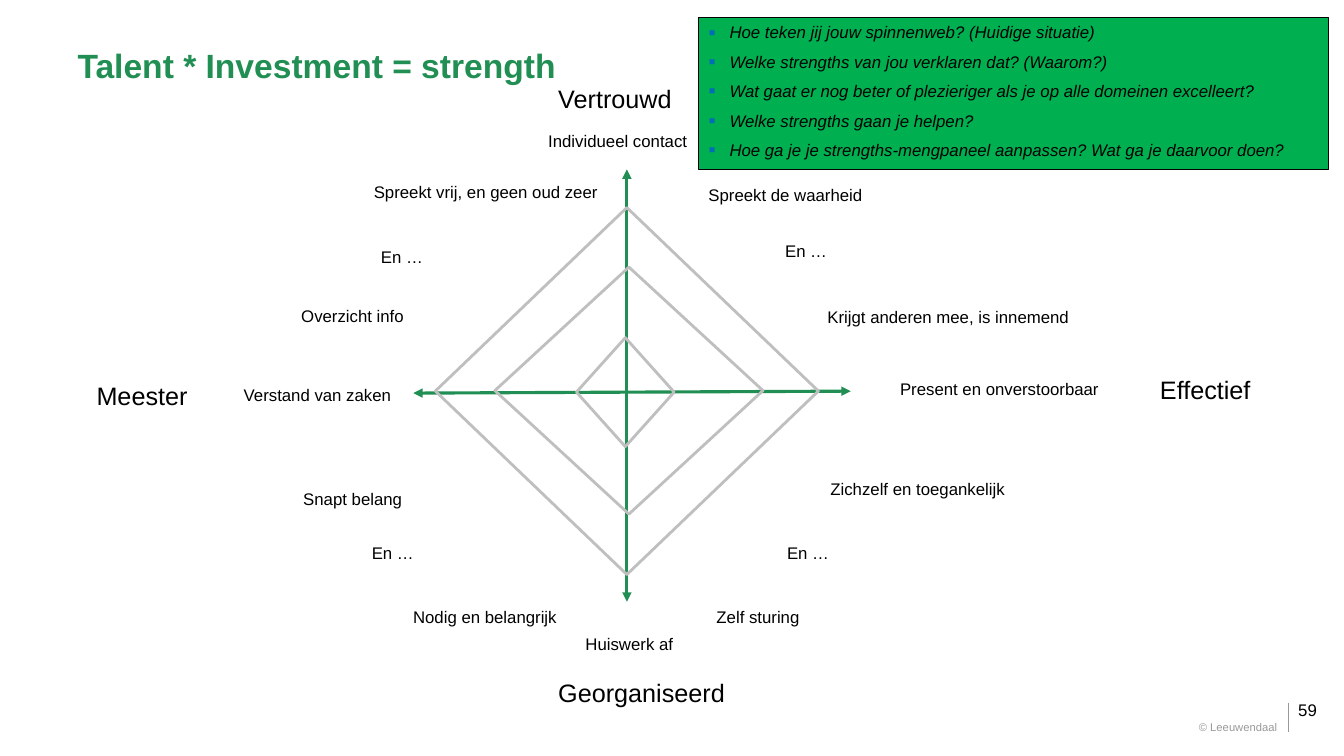
from dataclasses import dataclass

from lxml.etree import SubElement
from pptx import Presentation
from pptx.dml.color import RGBColor
from pptx.enum.shapes import MSO_CONNECTOR, MSO_SHAPE
from pptx.enum.text import MSO_ANCHOR, PP_ALIGN
from pptx.oxml.ns import qn
from pptx.shapes.autoshape import Shape
from pptx.slide import Slide
from pptx.text.text import _Paragraph as Paragraph
from pptx.util import Pt

GREEN = RGBColor(0x21, 0x8F, 0x53)
PANEL_GREEN = RGBColor(0x00, 0xB0, 0x50)
WEB_GREY = RGBColor(0xBF, 0xBF, 0xBF)
FOOTER_GREY = RGBColor(0x99, 0x99, 0x99)
BULLET_BLUE = RGBColor(0x00, 0x6E, 0xB6)
BLACK = RGBColor(0, 0, 0)


@dataclass(frozen=True)
class Label:
    text: str
    left: float
    top: float
    width: float
    size: float = 12


@dataclass(frozen=True)
class Line:
    start: tuple[float, float]
    end: tuple[float, float]
    color: RGBColor = GREEN
    weight: float = 2.25
    arrows: bool = True


@dataclass(frozen=True)
class Diamond:
    left: float
    top: float
    width: float
    height: float


LINES = [
    Line((295.2, 280.8), (607.7, 279.4)),
    Line((447.8, 429.8), (447.8, 121)),
    Line((920.2, 501.8), (920.2, 522.7), FOOTER_GREY, 0.75, False),
]

LABELS = [
    Label("Georganiseerd", 391.7, 480.2, 134.6, 18),
    Label("Effectief", 821.5, 263.5, 80, 18),
    Label("Meester", 61.9, 267.8, 80, 18),
    Label("Vertrouwd", 391.7, 56.2, 96.5, 18),
    Label("Huiswerk af", 411.1, 449.3, 77.8),
    Label("Nodig en belangrijk", 288, 429.8, 117.4),
    Label("Zelf sturing", 504.7, 429.8, 74.2),
    Label("Present en onverstoorbaar", 635.8, 267.1, 157.7),
    Label("Krijgt anderen mee, is innemend", 583.9, 215.3, 188.6),
    Label("Zichzelf en toegankelijk", 586.1, 338.4, 139.7),
    Label("Verstand van zaken", 167, 271.4, 121),
    Label("Overzicht info", 208.1, 214.6, 88.6),
    Label("Snapt belang", 209.5, 345.6, 85.7),
    Label("Individueel contact", 384.5, 90, 114.5),
    Label("Spreekt de waarheid", 499, 128.2, 125.3),
    Label("Spreekt vrij, en geen oud zeer", 259.9, 126, 179.3),
    Label("En …", 258.5, 383.8, 44.6),
    Label("En …", 265, 172.8, 44.6),
    Label("En …", 553.7, 168.5, 44.6),
    Label("En …", 555.1, 383.8, 44.6),
]

WEB = [
    Diamond(411.8, 241.2, 69.8, 77.8),
    Diamond(353.5, 190.8, 191.5, 176.4),
    Diamond(311, 148.3, 273.6, 262.1),
]

QUESTIONS = [
    "Hoe teken jij jouw spinnenweb? (Huidige situatie)",
    "Welke strengths van jou verklaren dat? (Waarom?)",
    "Wat gaat er nog beter of plezieriger als je op alle domeinen excelleert?",
    "Welke strengths gaan je helpen?",
    "Hoe ga je je strengths-mengpaneel aanpassen? Wat ga je daarvoor doen?",
]


def add_span(para: Paragraph, text: str, size: float, color: RGBColor = BLACK,
             bold: bool = False, italic: bool = False) -> None:
    span = para.add_run()
    span.text = text
    span.font.name = "Arial"
    span.font.size = Pt(size)
    span.font.color.rgb = color
    span.font.bold = bold
    span.font.italic = italic


def add_title(page: Slide, text: str) -> None:
    title = page.shapes.title
    title.left, title.top, title.width, title.height = Pt(48.2), Pt(28.8), Pt(879.8), Pt(36)
    title.text_frame.vertical_anchor = MSO_ANCHOR.MIDDLE
    para = title.text_frame.paragraphs[0]
    para.alignment = PP_ALIGN.LEFT
    add_span(para, text, 24, GREEN, bold=True)


def add_label(page: Slide, label: Label) -> None:
    box = page.shapes.add_textbox(Pt(label.left), Pt(label.top), Pt(label.width),
                                  Pt(label.size * 1.2 + 7.2))
    box.text_frame.word_wrap = False
    add_span(box.text_frame.paragraphs[0], label.text, label.size)


def add_footer(page: Slide, label: Label, color: RGBColor, align: PP_ALIGN) -> None:
    box = page.shapes.add_textbox(Pt(label.left), Pt(label.top), Pt(label.width),
                                  Pt(label.size * 1.2))
    frame = box.text_frame
    frame.word_wrap = True
    frame.margin_top = frame.margin_bottom = 0
    frame.paragraphs[0].alignment = align
    add_span(frame.paragraphs[0], label.text, label.size, color)


def add_line(page: Slide, line: Line) -> None:
    connector = page.shapes.add_connector(MSO_CONNECTOR.STRAIGHT, *map(Pt, line.start + line.end))
    connector.line.color.rgb = line.color
    connector.line.width = Pt(line.weight)
    properties = connector._element.spPr
    if line.arrows:
        for end in ("a:headEnd", "a:tailEnd"):
            SubElement(properties.find(qn("a:ln")), qn(end), type="triangle")
    SubElement(properties, qn("a:effectLst"))


def add_outlined(page: Slide, kind: MSO_SHAPE, area: Diamond, color: RGBColor,
                 weight: float) -> Shape:
    shape = page.shapes.add_shape(kind, Pt(area.left), Pt(area.top),
                                  Pt(area.width), Pt(area.height))
    shape.shadow.inherit = False
    shape.fill.background()
    shape.line.color.rgb = color
    shape.line.width = Pt(weight)
    return shape


def add_bullet(para: Paragraph) -> None:
    properties = para._p.get_or_add_pPr()
    properties.set("marL", str(Pt(15)))
    properties.set("indent", str(-Pt(15)))
    color = SubElement(properties, qn("a:buClr"))
    SubElement(color, qn("a:srgbClr"), val=str(BULLET_BLUE))
    SubElement(properties, qn("a:buSzPct"), val="120000")
    SubElement(properties, qn("a:buFont"), typeface="Arial")
    SubElement(properties, qn("a:buChar"), char="▪")


def add_questions(page: Slide) -> None:
    panel = add_outlined(page, MSO_SHAPE.RECTANGLE, Diamond(499, 12.2, 450, 108.7), BLACK, 0.75)
    panel.fill.solid()
    panel.fill.fore_color.rgb = PANEL_GREEN
    frame = panel.text_frame
    frame.word_wrap = True
    frame.vertical_anchor = MSO_ANCHOR.TOP
    for index, question in enumerate(QUESTIONS):
        para = frame.add_paragraph() if index else frame.paragraphs[0]
        add_bullet(para)
        para.alignment = PP_ALIGN.LEFT
        para.space_before = Pt(6.6 if index else 0)
        add_span(para, question, 12, italic=True)


def main() -> None:
    deck = Presentation()
    deck.slide_width, deck.slide_height = Pt(960), Pt(540)
    page = deck.slides.add_slide(deck.slide_layouts[5])
    add_title(page, "Talent * Investment = strength")
    for line in LINES:
        add_line(page, line)
    for label in LABELS:
        add_label(page, label)
    for diamond in WEB:
        add_outlined(page, MSO_SHAPE.DIAMOND, diamond, WEB_GREY, 2)
    add_questions(page)
    add_footer(page, Label("59", 920.2, 499.7, 49.7), BLACK, PP_ALIGN.LEFT)
    add_footer(page, Label("© Leeuwendaal", 802.8, 514.8, 116.6, 8), FOOTER_GREY, PP_ALIGN.RIGHT)
    deck.save("out.pptx")


if __name__ == "__main__":
    main()
